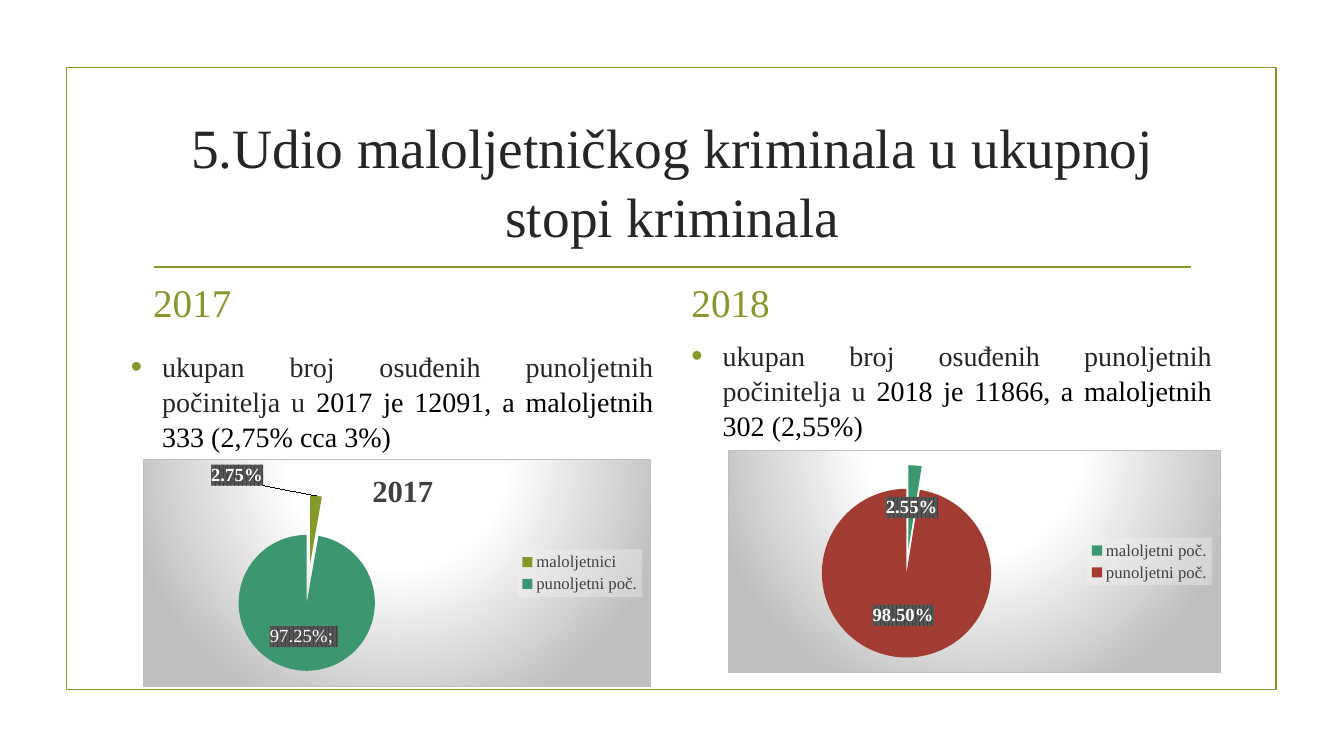
from lxml.etree import SubElement as Sub
from pptx import Presentation
from pptx.chart.data import CategoryChartData as ChartData
from pptx.dml.color import RGBColor as RGB
from pptx.enum.chart import XL_CHART_TYPE as Kind, XL_LABEL_POSITION as Spot
from pptx.enum.chart import XL_LEGEND_POSITION as Side
from pptx.enum.shapes import MSO_CONNECTOR as Conn, MSO_SHAPE as Form
from pptx.enum.text import MSO_ANCHOR as Anchor, PP_ALIGN as Align
from pptx.oxml import parse_xml
from pptx.oxml.ns import nsdecls, qn
from pptx.util import Inches, Pt

FONT = "Times New Roman"
HUES = {"olive": "83992A", "green": "3C9770", "red": "A23C33", "ink": "262626",
        "black": "000000", "grey": "404040", "slate": "595959", "white": "FFFFFF",
        "silver": "BFBFBF", "pale": "F2F2F2"}


def hue(name):
    """Return a named colour."""
    return RGB.from_string(HUES[name])


def style(font, size, name, bold=False):
    """Set typeface, size, colour and weight."""
    font.name, font.size, font.bold = FONT, Pt(size), bold
    font.color.rgb = hue(name)


def add_frame(slide):
    """Draw the border and the rule under the title."""
    box = slide.shapes.add_shape(Form.RECTANGLE, *map(Inches, (0.66, 0.67, 12, 6.17)))
    box.shadow.inherit = False
    box.fill.background()
    rule = slide.shapes.add_connector(
        Conn.STRAIGHT, *map(Inches, (1.53, 2.65, 11.81, 2.65)))
    Sub(rule._element.spPr, qn("a:effectLst"))
    for shape in (box, rule):
        shape.line.color.rgb = hue("olive")
        shape.line.width = Pt(1.25)


def add_text(slide, area, text, size, name, anchor, align=Align.LEFT):
    """Add a one-paragraph text box and return its paragraph."""
    frame = slide.shapes.add_textbox(*map(Inches, area)).text_frame
    frame.word_wrap = True
    frame.vertical_anchor = anchor
    para = frame.paragraphs[0]
    para.text = text
    para.alignment = align
    style(para.font, size, name)
    return para


def add_bullet(slide, area, lead, rest):
    """Add a justified bullet whose second part is black."""
    para = add_text(slide, area, "", 20, "ink", Anchor.TOP, Align.JUSTIFY)
    para.line_spacing = 1.05
    props = para._p.get_or_add_pPr()
    props.set("marL", str(Inches(0.31)))
    props.set("indent", str(-Inches(0.31)))
    marks = (
        f'<a:buClr {nsdecls("a")}><a:srgbClr val="{HUES["olive"]}"/></a:buClr>',
        f'<a:buSzPct {nsdecls("a")} val="115000"/>',
        f'<a:buFont {nsdecls("a")} typeface="Arial"/>',
        f'<a:buChar {nsdecls("a")} char="•"/>')
    font = props.find(qn("a:defRPr"))
    for mark in marks:
        font.addprevious(parse_xml(mark))
    for text, name in ((lead, "ink"), (rest, "black")):
        run = para.add_run()
        run.text = text
        style(run.font, 20, name)


def props_xml(inner):
    """Wrap fill and line markup as chart shape properties."""
    return parse_xml(f'<c:spPr {nsdecls("c", "a")}>{inner}</c:spPr>')


def layout_xml(edge=False, inner=False, **spots):
    """Build a manual chart layout."""
    parts = '<c:layoutTarget val="inner"/>' if inner else ""
    if edge:
        parts += '<c:xMode val="edge"/><c:yMode val="edge"/>'
    parts += "".join(f'<c:{key} val="{val}"/>' for key, val in spots.items())
    return parse_xml(f'<c:layout {nsdecls("c")}><c:manualLayout>{parts}'
                     '</c:manualLayout></c:layout>')


def tint(node):
    """Give a label its dark patterned fill."""
    old = node.find(qn("c:spPr"))
    if old is not None:
        node.remove(old)
    fill = props_xml(
        '<a:pattFill prst="pct75">'
        f'<a:fgClr><a:srgbClr val="{HUES["grey"]}"/></a:fgClr>'
        f'<a:bgClr><a:srgbClr val="{HUES["slate"]}"/></a:bgClr></a:pattFill>')
    tags = ("c:txPr", "c:dLblPos", "c:showLegendKey")
    next(n for n in map(node.find, map(qn, tags)) if n is not None).addprevious(fill)


def add_pie(slide, area, name, cats, vals, fills, burst):
    """Add an exploded pie with legend and labels."""
    data = ChartData(number_format="0.00%")
    data.categories = cats
    data.add_series(name, vals)
    chart = slide.shapes.add_chart(Kind.PIE, *map(Inches, area), data).chart
    style(chart.font, 10, "black")
    chart.has_title = False
    stops = "".join(f'<a:gs pos="{pos}"><a:srgbClr val="{HUES[key]}"/></a:gs>'
                    for pos, key in ((0, "white"), (39000, "white"), (100000, "silver")))
    chart._chartSpace.find(qn("c:chart")).addnext(props_xml(
        f'<a:gradFill><a:gsLst>{stops}</a:gsLst><a:path path="circle">'
        '<a:fillToRect l="50000" t="-80000" r="50000" b="180000"/></a:path></a:gradFill>'
        f'<a:ln w="9525"><a:solidFill><a:srgbClr val="{HUES["silver"]}"/>'
        '</a:solidFill></a:ln>'))
    chart.has_legend = True
    legend = chart.legend
    legend.position = Side.RIGHT
    legend.include_in_layout = False
    style(legend.font, 12, "grey")
    legend._element.find(qn("c:txPr")).addprevious(props_xml(
        f'<a:solidFill><a:srgbClr val="{HUES["pale"]}"><a:alpha val="39000"/>'
        '</a:srgbClr></a:solidFill>'))
    plot = chart.plots[0]
    plot.vary_by_categories = True
    series = plot.series[0]
    for i, key in enumerate(fills):
        fill = series.points[i].format.fill
        fill.solid()
        fill.fore_color.rgb = hue(key)
    series._element.find(qn("c:dPt")).addprevious(
        parse_xml(f'<c:explosion {nsdecls("c")} val="{burst}"/>'))
    for point in series._element.findall(qn("c:dPt")):
        point.find(qn("c:spPr")).addprevious(
            parse_xml(f'<c:explosion {nsdecls("c")} val="{burst}"/>'))
    labels = series.data_labels
    style(labels.font, 13.3, "white", True)
    labels.number_format = "0.00%"
    labels.number_format_is_linked = False
    labels.position = Spot.CENTER
    labels.show_value = True
    labels.show_percentage = False
    tint(labels._element)
    return chart


def tune(chart):
    """Place the title, plot and labels of the 2017 pie."""
    chart.has_title = True
    title = chart.chart_title
    para = title.text_frame.paragraphs[0]
    para.text = "2017"
    style(para.font, 22, "grey", True)
    node = title._element
    for old in node.findall(qn("c:layout")):
        node.remove(old)
    node.find(qn("c:tx")).addnext(layout_xml(edge=True, x=0.44, y=0.03))
    area = chart._chartSpace.find(qn("c:chart")).find(qn("c:plotArea"))
    for old in area.findall(qn("c:layout")):
        area.remove(old)
    area.insert(0, layout_xml(True, True, x=0.04, y=0.16, w=0.57, h=0.77))
    points = chart.plots[0].series[0].points
    small, large = (points[i].data_label for i in range(2))
    style(small.font, 13.3, "white", True)
    para = large.text_frame.paragraphs[0]
    para.text = "97.25%; "
    style(para.font, 13.3, "white")
    for label in (small, large):
        label.position = Spot.CENTER
    nodes = list(chart._chartSpace.iter(qn("c:dLbl")))
    for node in nodes:
        tint(node)
    nodes[0].find(qn("c:idx")).addnext(layout_xml(x=-0.15, y=-0.24))


def main():
    """Build the slide."""
    deck = Presentation()
    deck.slide_width, deck.slide_height = Inches(13.33), Inches(7.5)
    slide = deck.slides.add_slide(deck.slide_layouts[6])
    add_frame(slide)
    title = add_text(slide, (1.42, 1.07, 10.5, 1.43),
                     "5.Udio maloljetničkog kriminala u ukupnoj stopi kriminala",
                     39.6, "ink", Anchor.MIDDLE, Align.CENTER)
    title.line_spacing = 1.03
    lead = "ukupan broj osuđenih punoljetnih počinitelja u "
    for left, year, area, rest in (
            (1.42, "2017", (1.2, 3.4, 5.38, 3.55),
             "2017 je 12091, a maloljetnih 333 (2,75% cca 3%)"),
            (6.76, "2018", (6.76, 3.29, 5.36, 3.25),
             "2018 je 11866, a maloljetnih 302 (2,55%)")):
        add_text(slide, (left, 2.62, 5.16, 0.66), year, 28, "olive", Anchor.BOTTOM)
        add_bullet(slide, area, lead, rest)
    tune(add_pie(slide, (1.42, 4.55, 5.04, 2.27), "2017",
                 ("maloljetnici", "punoljetni poč."), (0.0275, 0.9725),
                 ("olive", "green"), 29))
    add_pie(slide, (7.22, 4.46, 4.89, 2.22), "Series 1",
            ("maloljetni poč.", "punoljetni poč."), (0.0255, 0.985),
            ("green", "red"), 14)
    deck.save("out.pptx")


if __name__ == "__main__":
    main()
